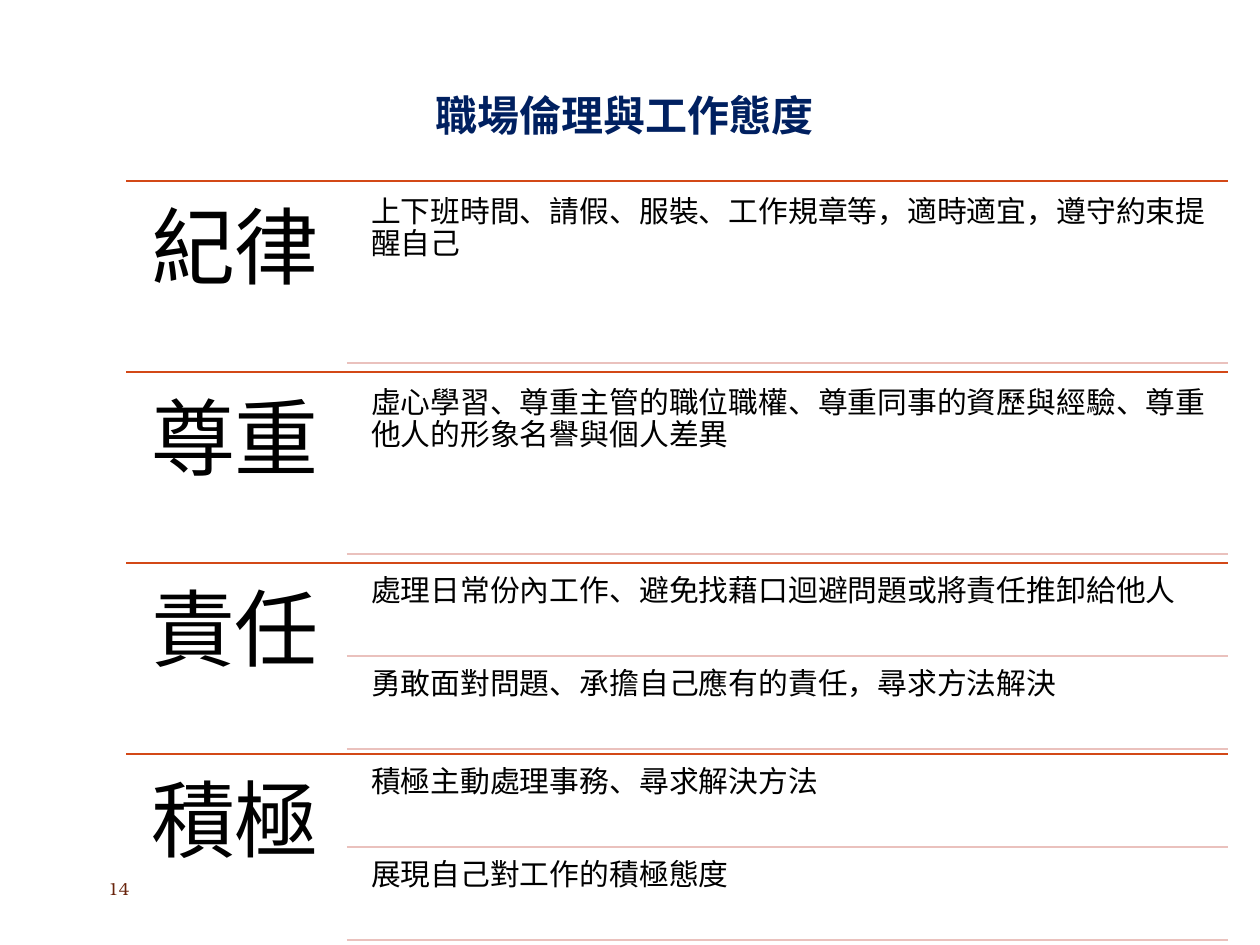
"""Builds the slide on workplace ethics and working attitude."""
from lxml import etree
from pptx import Presentation
from pptx.dml.color import RGBColor
from pptx.enum.shapes import MSO_CONNECTOR as Connector
from pptx.enum.text import MSO_ANCHOR as Anchor, PP_ALIGN as Align
from pptx.oxml.ns import qn
from pptx.util import Pt

PX = 914400 / 126
SANS = "Noto Sans CJK SC"
LEFT, RIGHT, TOP, ROW_HEIGHT = 126, 1228, 181, 191
RULE_LEFT, POINT_LEFT = 347, 363

topics = [
    ("紀律", ["上下班時間、請假、服裝、工作規章等，適時適宜，遵守約束提醒自己"]),
    ("尊重", ["虛心學習、尊重主管的職位職權、尊重同事的資歷與經驗、尊重他人的形象名譽與個人差異"]),
    ("責任", ["處理日常份內工作、避免找藉口迴避問題或將責任推卸給他人",
            "勇敢面對問題、承擔自己應有的責任，尋求方法解決"]),
    ("積極", ["積極主動處理事務、尋求解決方法", "展現自己對工作的積極態度"]),
]
spacing = {1: (8, 174), 2: (5, 88)}

deck = Presentation()
deck.slide_width, deck.slide_height = round(1260 * PX), round(945 * PX)
slide = deck.slides.add_slide(deck.slide_layouts[6])


def add_text(text, box, size, color="000000", font=SANS, bold=False, align=Align.LEFT,
             anchor=Anchor.TOP, inset=(13, 6), line_spacing=None):
    frame = slide.shapes.add_textbox(*(round(v * PX) for v in box)).text_frame
    frame.word_wrap = True
    frame.vertical_anchor = anchor
    frame.margin_left = frame.margin_right = round(inset[0] * PX)
    frame.margin_top = frame.margin_bottom = round(inset[1] * PX)
    paragraph = frame.paragraphs[0]
    paragraph.alignment = align
    paragraph.line_spacing = line_spacing
    run = paragraph.add_run()
    run.text = text
    run.font.size, run.font.bold, run.font.name = Pt(size), bold, font
    run.font.color.rgb = RGBColor.from_string(color)
    etree.SubElement(run.font._element, qn("a:ea"), typeface=font)


def add_rule(left, y, color):
    ends = (round(v * PX) for v in (left, y, RIGHT, y))
    rule = slide.shapes.add_connector(Connector.STRAIGHT, *ends)
    rule.line.color.rgb = RGBColor.from_string(color)
    rule.line.width = Pt(1)
    etree.SubElement(rule._element.spPr, qn("a:effectLst"))


for row, (topic, points) in enumerate(topics):
    row_top = TOP + row * ROW_HEIGHT
    add_rule(LEFT, row_top, "D34817")
    add_text(topic, (LEFT, row_top, 221, ROW_HEIGHT), 48, inset=(25, 25), line_spacing=0.9)
    gap, height = spacing[len(points)]
    for index, point in enumerate(points):
        point_top = row_top + gap + index * (gap + height)
        add_text(point, (POINT_LEFT, point_top, RIGHT - POINT_LEFT, height), 17,
                 inset=(8, 8), line_spacing=0.9)
        add_rule(RULE_LEFT, point_top + height, "EAC1BD")

add_text("職場倫理與工作態度", (147, 84, 955, 63), 24, color="002060", bold=True, align=Align.CENTER)
add_text("14", (95, 864, 654, 50), 10, color="69240C", font="TeX Gyre Bonum", anchor=Anchor.MIDDLE)

deck.save("out.pptx")
